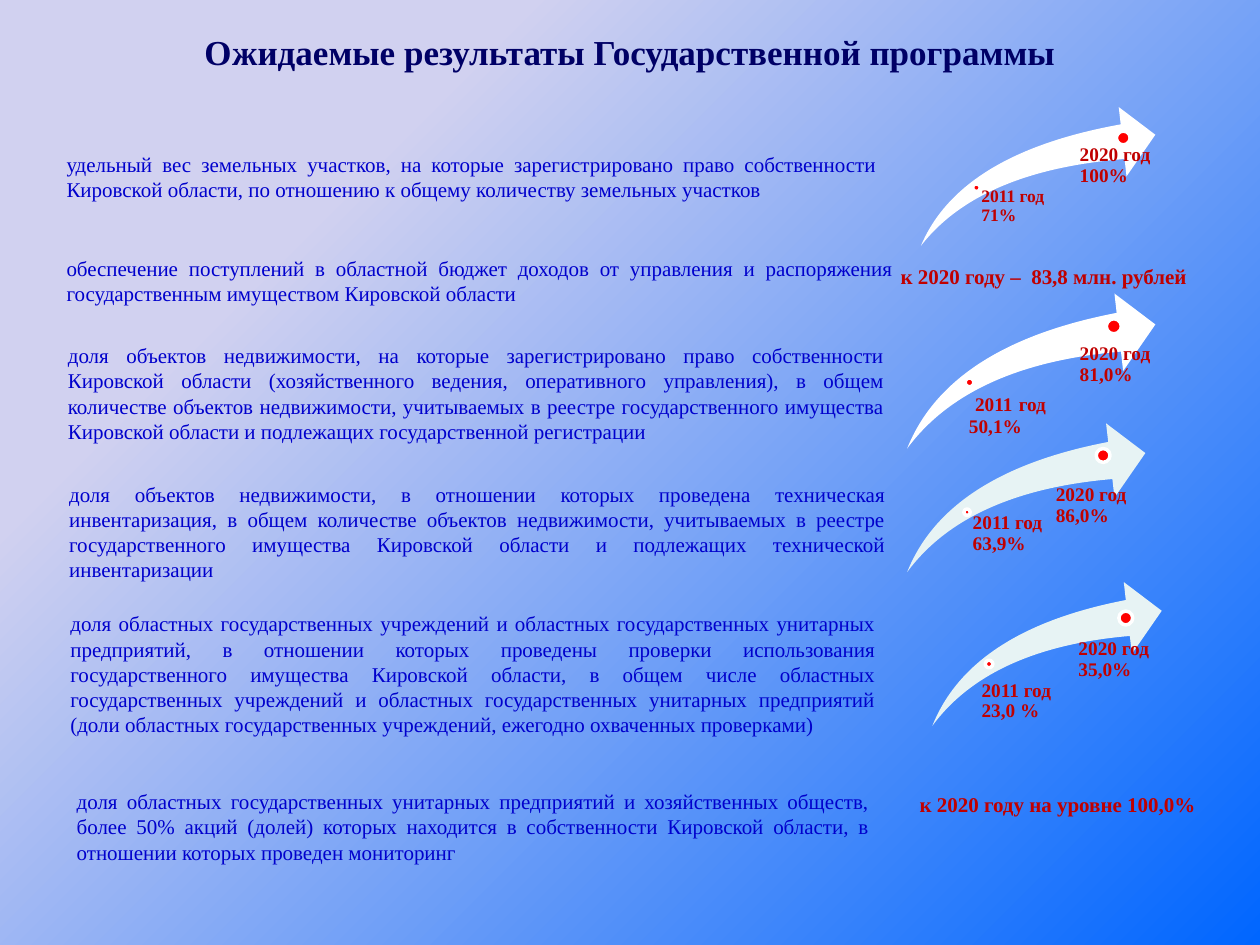
from dataclasses import dataclass
from itertools import groupby
from typing import Any, Optional

import pptx
import pptx.dml.color
import pptx.enum.shapes
import pptx.enum.text
import pptx.util

ALIGN = pptx.enum.text.PP_ALIGN
ANCHOR = pptx.enum.text.MSO_ANCHOR
AUTO_SIZE = pptx.enum.text.MSO_AUTO_SIZE
SHAPE = pptx.enum.shapes.MSO_SHAPE

WIDTH, HEIGHT = pptx.util.Inches(10), pptx.util.Inches(7.5)
COLUMN, ROW = WIDTH / 100, HEIGHT / 75


@dataclass(frozen=True)
class Theme:
    font: str = "Times New Roman"
    title: str = "000066"
    body: str = "0000CC"
    accent: str = "C00000"
    dot: str = "FF0000"
    white: str = "FFFFFF"
    pale: str = "E7F3F4"
    gradient: tuple = ((0.24, "D1D1F0"), (1, "0066FF"))
    title_size: int = 20
    body_size: int = 12
    label_size: int = 11
    small_size: int = 10
    gap_size: int = 14
    dot_line: int = 2


THEME = Theme()


@dataclass(frozen=True)
class Box:
    column: float
    row: float
    columns: float
    rows: float

    def place(self) -> tuple:
        return (round(self.column * COLUMN), round(self.row * ROW),
                round(self.columns * COLUMN), round(self.rows * ROW))


@dataclass(frozen=True)
class Label:
    text: str
    box: Box
    inset: float
    size: int = THEME.label_size
    gap_size: Optional[int] = None


@dataclass(frozen=True)
class Growth:
    arrow: Box
    fill: str
    dots: tuple
    labels: tuple


def dot(column: float, row: float, size: float) -> Box:
    return Box(column, row, size, size)


def color(value: str) -> pptx.dml.color.RGBColor:
    return pptx.dml.color.RGBColor.from_string(value)


def apply(target: Any, values: dict) -> None:
    for name, value in values.items():
        setattr(target, name, value)


def add_run(paragraph: Any, text: str, size: int, ink: str, bold: bool) -> None:
    run = paragraph.add_run()
    run.text = text
    apply(run.font, {"name": THEME.font, "size": pptx.util.Pt(size), "bold": bold})
    run.font.color.rgb = color(ink)


def add_text(shapes: Any, box: Box, frame_format: dict, paragraph_format: dict) -> Any:
    frame = shapes.add_textbox(*box.place()).text_frame
    apply(frame, {"word_wrap": True} | frame_format)
    paragraph = frame.paragraphs[0]
    apply(paragraph, paragraph_format)
    return paragraph


def add_shape(shapes: Any, kind: Any, box: Box, fill: str) -> Any:
    shape = shapes.add_shape(kind, *box.place())
    shape.shadow.inherit = False
    shape.fill.solid()
    shape.fill.fore_color.rgb = color(fill)
    shape.line.fill.background()
    return shape


def add_label(shapes: Any, label: Label) -> None:
    margins = {"margin_left": round(label.inset * COLUMN),
               "margin_top": 0, "margin_right": 0, "margin_bottom": 0}
    paragraph = add_text(shapes, label.box, margins, {"line_spacing": 0.9})
    if label.gap_size is None:
        add_run(paragraph, label.text, label.size, THEME.accent, True)
        return
    for is_gap, characters in groupby(label.text, str.isspace):
        size = label.gap_size if is_gap else label.size
        add_run(paragraph, "".join(characters), size, THEME.accent, not is_gap)


def add_growth(slide: Any, growth: Growth) -> None:
    shapes = slide.shapes.add_group_shape().shapes
    arrow = add_shape(shapes, SHAPE.SWOOSH_ARROW, growth.arrow, growth.fill)
    for index in range(2):
        arrow.adjustments[index] = 0.25
    for box, label in zip(growth.dots, growth.labels):
        marker = add_shape(shapes, SHAPE.OVAL, box, THEME.dot)
        marker.line.color.rgb = color(THEME.white)
        marker.line.width = pptx.util.Pt(THEME.dot_line)
        add_label(shapes, label)


INDICATORS = (
    ("удельный вес земельных участков, на которые зарегистрировано право собственности Кировской области, "
     "по отношению к общему количеству земельных участков", Box(4.3, 11.5, 66.3, 5)),
    ("обеспечение поступлений в областной бюджет доходов от управления и распоряжения "
     "государственным имуществом Кировской области", Box(4.3, 19.8, 67.6, 5)),
    ("доля объектов недвижимости, на которые зарегистрировано право собственности Кировской области "
     "(хозяйственного ведения, оперативного управления), в общем количестве объектов недвижимости, "
     "учитываемых в реестре государственного имущества Кировской области и подлежащих "
     "государственной регистрации", Box(4.4, 26.7, 66.8, 9.1)),
    ("доля объектов недвижимости, в отношении которых проведена техническая инвентаризация, "
     "в общем количестве объектов недвижимости, учитываемых в реестре государственного имущества "
     "Кировской области и подлежащих технической инвентаризации", Box(4.5, 37.7, 66.8, 9.1)),
    ("доля областных государственных учреждений и областных государственных унитарных предприятий, "
     "в отношении которых проведены проверки использования государственного имущества Кировской области, "
     "в общем числе областных государственных учреждений и областных государственных унитарных предприятий "
     "(доли областных государственных учреждений, ежегодно охваченных проверками)", Box(4.6, 48, 65.9, 11.1)),
    ("доля областных государственных унитарных предприятий и хозяйственных обществ, более 50% акций (долей) "
     "которых находится в собственности Кировской области, в отношении которых проведен мониторинг",
     Box(5.1, 62.1, 64.9, 7.1)),
)

TARGETS = (
    ("к 2020 году –  83,8 млн. рублей", Box(70.5, 20.4, 25, 3)),
    ("к 2020 году на уровне 100,0%", Box(72, 62.3, 24.2, 3)),
)

GROWTHS = (
    Growth(Box(73.1, 8.5, 18.6, 11), THEME.white, (dot(77.2, 14.6, 0.6), dot(88.6, 10.4, 1.1)),
           (Label("2011 год 71%", Box(77.6, 14.9, 5.7, 4.7), 0.3, THEME.small_size),
            Label("2020 год 100%", Box(85.1, 11.5, 6.6, 5), 0.6))),
    Growth(Box(72, 23.3, 19.7, 12.3), THEME.white, (dot(76.6, 30, 0.7), dot(87.8, 25.3, 1.2)),
           (Label(" 2011 год 50,1%", Box(76.5, 31, 7.4, 3.9), 0.4, gap_size=THEME.gap_size),
            Label("2020 год 81,0%", Box(85.1, 27.3, 6.4, 5.3), 0.6))),
    Growth(Box(72, 33.6, 18.9, 11.8), THEME.pale, (dot(76.5, 40.4, 0.5), dot(87, 35.6, 1.1)),
           (Label("2011 год 63,9%", Box(76.8, 40.7, 6.1, 5), 0.4),
            Label("2020 год 86,0%", Box(83.2, 38.5, 7.7, 3.5), 0.6))),
    Growth(Box(74, 46.2, 18.2, 11.4), THEME.pale, (dot(78.2, 52.4, 0.6), dot(88.8, 48.5, 1.1)),
           (Label("2011 год 23,0 %", Box(77.6, 54, 7.8, 2.2), 0.3),
            Label("2020 год 35,0%", Box(85, 50.7, 8.3, 6.8), 0.6))),
)


def main() -> None:
    presentation = pptx.Presentation()
    apply(presentation, {"slide_width": WIDTH, "slide_height": HEIGHT})
    slide = presentation.slides.add_slide(presentation.slide_layouts[6])

    background = slide.background.fill
    background.gradient()
    background.gradient_angle = 315
    for stop, (position, value) in zip(background.gradient_stops, THEME.gradient):
        stop.position = position
        stop.color.rgb = color(value)

    title = add_text(slide.shapes, Box(5, 2.1, 90, 3.9),
                     {"vertical_anchor": ANCHOR.MIDDLE}, {"alignment": ALIGN.CENTER})
    add_run(title, "Ожидаемые результаты Государственной программы",
            THEME.title_size, THEME.title, True)

    grow = {"auto_size": AUTO_SIZE.SHAPE_TO_FIT_TEXT}
    for text, box in INDICATORS:
        paragraph = add_text(slide.shapes, box, grow, {"alignment": ALIGN.JUSTIFY})
        add_run(paragraph, text, THEME.body_size, THEME.body, False)
    for growth in GROWTHS:
        add_growth(slide, growth)
    for text, box in TARGETS:
        paragraph = add_text(slide.shapes, box, grow | {"word_wrap": False}, {})
        add_run(paragraph, text, THEME.body_size, THEME.accent, True)

    presentation.save("out.pptx")


if __name__ == "__main__":
    main()
